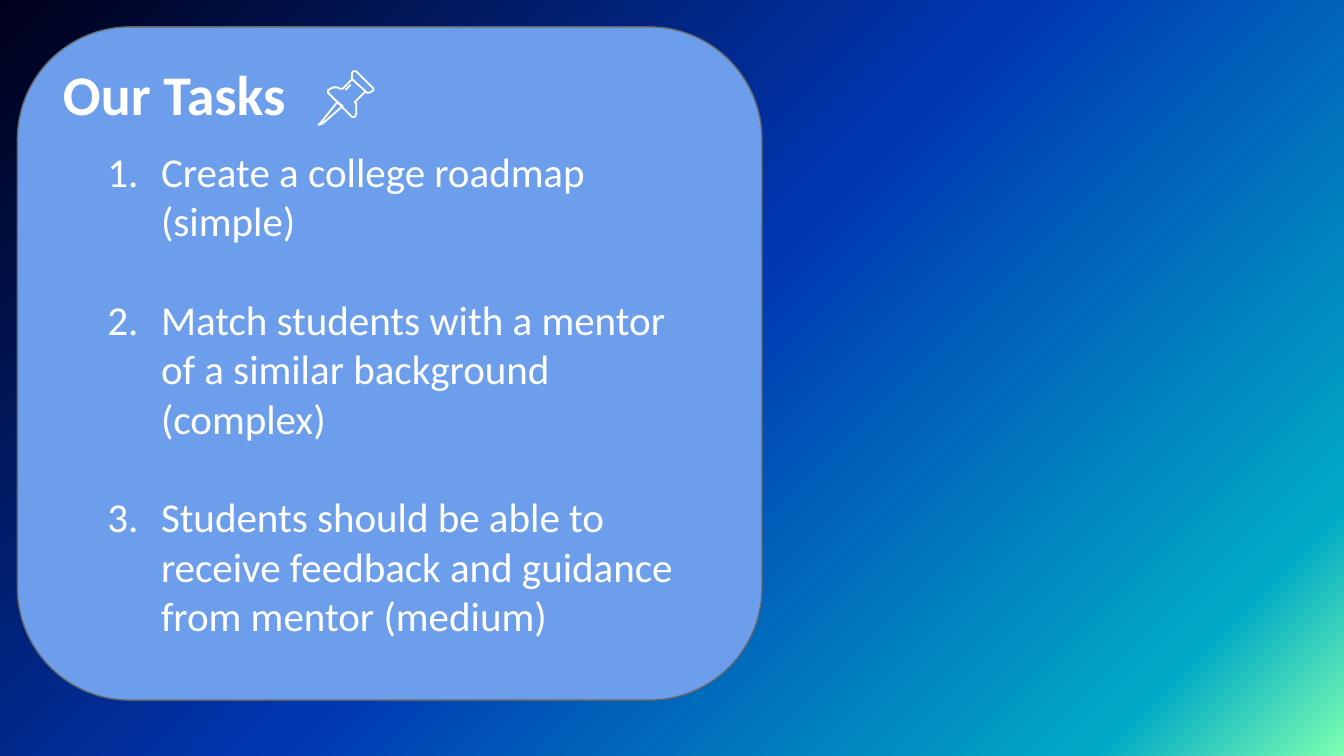
from lxml.etree import SubElement
from pptx import Presentation
from pptx.dml.color import RGBColor
from pptx.enum.shapes import MSO_SHAPE
from pptx.oxml.ns import qn
from pptx.util import Inches, Pt

# Content
TITLE = "Our Tasks"
TASKS = [
    "Create a college roadmap (simple)",
    "Match students with a mentor of a similar background (complex)",
    "Students should be able to receive feedback and guidance from mentor (medium)",
]

# Style
FONT = "Calibri"
WHITE = RGBColor(0xFF, 0xFF, 0xFF)
PANEL_BLUE = RGBColor(0x6D, 0x9E, 0xEB)
PANEL_EDGE = RGBColor(0x66, 0x66, 0x66)
BACKGROUND_STOPS = [
    (0, RGBColor(0x7D, 0xFF, 0xB1)),
    (12, RGBColor(0x00, 0xAA, 0xC6)),
    (51, RGBColor(0x00, 0x37, 0xB3)),
    (100, RGBColor(0x00, 0x00, 0x1A)),
]

# Pushpin outlines in hundredths of an inch: (points, closed)
PIN_NEEDLE = [(251, 76), (239, 91), (237, 93), (240, 92), (255, 79)]
PIN_HEAD = [(262, 59), (272, 68), (273, 69), (275, 69), (277, 68), (278, 67),
            (278, 66), (265, 53), (264, 53), (263, 53), (262, 54), (262, 57)]
PIN_BODY = [(262, 59), (255, 66), (253, 66), (251, 65), (248, 65), (246, 66),
            (244, 67), (244, 69), (262, 87), (263, 87), (264, 87), (265, 85),
            (265, 82), (265, 77), (264, 76), (272, 68)]
PIN_GLINT = [(257, 67), (261, 63)]
PUSHPIN = [(PIN_NEEDLE, True), (PIN_HEAD, True), (PIN_BODY, False), (PIN_GLINT, False)]


def add_text_frame(slide, left, top, width, height):
    box = slide.shapes.add_textbox(*map(Inches, (left, top, width, height)))
    frame = box.text_frame
    frame.word_wrap = True
    frame.margin_left = frame.margin_right = Inches(0.1)
    frame.margin_top = frame.margin_bottom = Inches(0.1)
    return frame


def add_run(paragraph, text, size, bold=False):
    run = paragraph.add_run()
    run.text = text
    run.font.name, run.font.size, run.font.bold = FONT, Pt(size), bold
    run.font.color.rgb = WHITE


def number_paragraph(paragraph):
    props = paragraph._p.get_or_add_pPr()
    props.set("marL", str(Inches(0.5)))
    props.set("indent", str(Inches(-0.4)))
    bullet_color = SubElement(props, qn("a:buClr"))
    SubElement(bullet_color, qn("a:srgbClr"), val=str(WHITE))
    SubElement(props, qn("a:buFont"), typeface=FONT)
    SubElement(props, qn("a:buAutoNum"), type="arabicPeriod")


def main():
    # Widescreen slide, 16:9
    prs = Presentation()
    prs.slide_width = Inches(10)
    prs.slide_height = Inches(10 * 9 / 16)
    slide = prs.slides.add_slide(prs.slide_layouts[6])

    # Diagonal background gradient
    background = slide.background.fill
    background.gradient()
    background.gradient_angle = 135
    stops = slide._element.find(".//" + qn("a:gsLst"))
    for stop in list(stops):
        stops.remove(stop)
    for percent, color in BACKGROUND_STOPS:
        stop = SubElement(stops, qn("a:gs"), pos=str(percent * 1000))
        SubElement(stop, qn("a:srgbClr"), val=str(color))

    # Rounded panel
    panel = slide.shapes.add_shape(
        MSO_SHAPE.ROUNDED_RECTANGLE, *map(Inches, (0.13, 0.2, 5.54, 5.01)))
    panel.adjustments[0] = 0.167
    panel.shadow.inherit = False
    panel.fill.solid()
    panel.fill.fore_color.rgb = PANEL_BLUE
    panel.line.color.rgb = PANEL_EDGE
    panel.line.width = Pt(0.75)

    # Title
    title = add_text_frame(slide, 0.37, 0.34, 4.41, 0.77)
    add_run(title.paragraphs[0], TITLE, 30, bold=True)

    # Numbered tasks, one line apart
    tasks = add_text_frame(slide, 0.6, 0.99, 4.64, 3.81)
    for i, task in enumerate(TASKS):
        paragraph = tasks.add_paragraph() if i else tasks.paragraphs[0]
        if i:
            paragraph.space_before = Pt(26.5)
        number_paragraph(paragraph)
        add_run(paragraph, task, 22)

    # Pushpin icon
    pushpin = slide.shapes.add_group_shape()
    for points, closed in PUSHPIN:
        builder = pushpin.shapes.build_freeform(*points[0], scale=Inches(0.01))
        builder.add_line_segments(points[1:], close=closed)
        outline = builder.convert_to_shape()
        outline.shadow.inherit = False
        outline.fill.background()
        outline.line.color.rgb = WHITE
        outline.line.width = Pt(0.96)

    prs.save("out.pptx")


if __name__ == "__main__":
    main()
